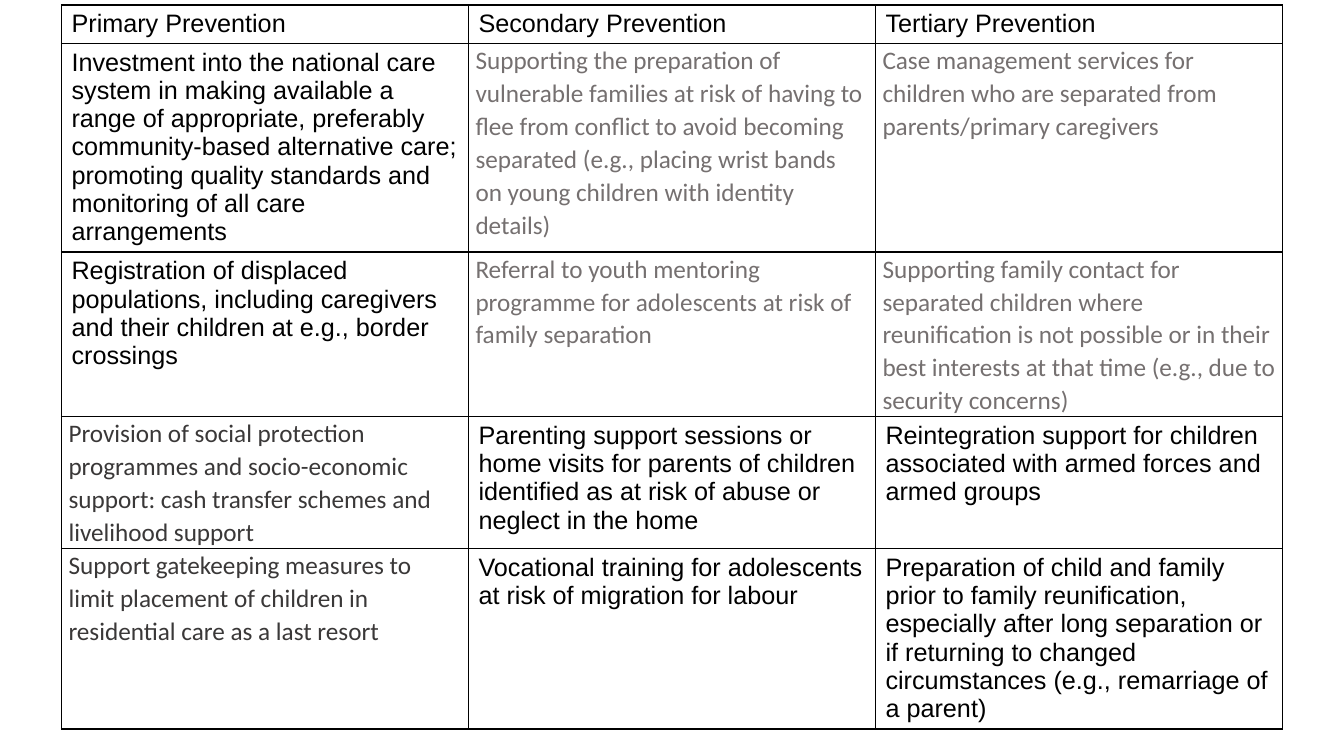
from lxml import etree
from pptx import Presentation
from pptx.dml.color import RGBColor
from pptx.oxml.ns import qn
from pptx.util import Inches, Pt

BLACK = RGBColor(0x00, 0x00, 0x00)
GREY = RGBColor(0x75, 0x70, 0x70)
CHARCOAL = RGBColor(0x3A, 0x38, 0x38)

# Cell formats: plain Arial, and tighter Calibri in two greys
PLAIN = {"font": "Arial", "color": BLACK, "side": 0.1, "edge": 0.05}
MUTED = {"font": "Calibri", "color": GREY, "side": 0.07, "edge": 0, "spacing": 1.07}
DARK = {**MUTED, "color": CHARCOAL}

ROW_HEIGHTS = [0.38, 2.07, 1.63, 1.31, 1.79]
PREVENTION_ROWS = [
    [("Primary Prevention", PLAIN),
     ("Secondary Prevention", PLAIN),
     ("Tertiary Prevention", PLAIN)],
    [("Investment into the national care system in making available a range of "
      "appropriate, preferably community-based alternative care; promoting quality "
      "standards and monitoring of all care arrangements", PLAIN),
     ("Supporting the preparation of vulnerable families at risk of having to flee "
      "from conflict to avoid becoming separated (e.g., placing wrist bands on young "
      "children with identity details)", MUTED),
     ("Case management services for children who are separated from "
      "parents/primary caregivers", MUTED)],
    [("Registration of displaced populations, including caregivers and their "
      "children at e.g., border crossings", PLAIN),
     ("Referral to youth mentoring programme for adolescents at risk of family "
      "separation", MUTED),
     ("Supporting family contact for separated children where reunification is not "
      "possible or in their best interests at that time (e.g., due to security "
      "concerns)", MUTED)],
    [("Provision of social protection programmes and socio-economic support: cash "
      "transfer schemes and livelihood support", DARK),
     ("Parenting support sessions or home visits for parents of children identified "
      "as at risk of abuse or neglect in the home", PLAIN),
     ("Reintegration support for children associated with armed forces and armed "
      "groups", PLAIN)],
    [("Support gatekeeping measures to limit placement of children in residential "
      "care as a last resort", DARK),
     ("Vocational training for adolescents at risk of migration for labour", PLAIN),
     ("Preparation of child and family prior to family reunification, especially "
      "after long separation or if returning to changed circumstances (e.g., "
      "remarriage of a parent)", PLAIN)],
]


def write_cell(cell, text, *, font, color, side, edge, spacing=None, size=18):
    """Fill one cell with a formatted paragraph."""
    cell.margin_left = cell.margin_right = Inches(side)
    cell.margin_top = cell.margin_bottom = Inches(edge)
    para = cell.text_frame.paragraphs[0]
    if spacing:
        para.line_spacing = spacing
    span = para.add_run()
    span.text = text
    span.font.name = font
    span.font.size = Pt(size)
    span.font.bold = False
    span.font.color.rgb = color


def outline_cell(cell, color=BLACK, width=1):
    """Rule all four sides of a cell and clear its fill."""
    properties = cell._tc.get_or_add_tcPr()
    for side in ("a:lnL", "a:lnR", "a:lnT", "a:lnB"):
        line = etree.SubElement(properties, qn(side), w=str(Pt(width)))
        fill = etree.SubElement(line, qn("a:solidFill"))
        etree.SubElement(fill, qn("a:srgbClr"), val=str(color))
    cell.fill.background()


def add_prevention_table(page, left, top, width):
    """Place the prevention table with equal columns across the width."""
    column_count = len(PREVENTION_ROWS[0])
    frame = page.shapes.add_table(
        len(PREVENTION_ROWS), column_count, Inches(left), Inches(top),
        Inches(width), Inches(sum(ROW_HEIGHTS)))
    table = frame.table
    table.first_row = table.horz_banding = False
    for column in table.columns:
        column.width = Inches(width / column_count)
    for row, height, entries in zip(table.rows, ROW_HEIGHTS, PREVENTION_ROWS):
        row.height = Inches(height)
        for cell, (text, style) in zip(row.cells, entries):
            write_cell(cell, text, **style)
            outline_cell(cell)


def main():
    deck = Presentation()
    deck.slide_width = Inches(13.33)
    deck.slide_height = Inches(7.5)
    page = deck.slides.add_slide(deck.slide_layouts[6])  # blank layout
    add_prevention_table(page, left=0.61, top=0.05, width=12.11)
    deck.save("out.pptx")


if __name__ == "__main__":
    main()
